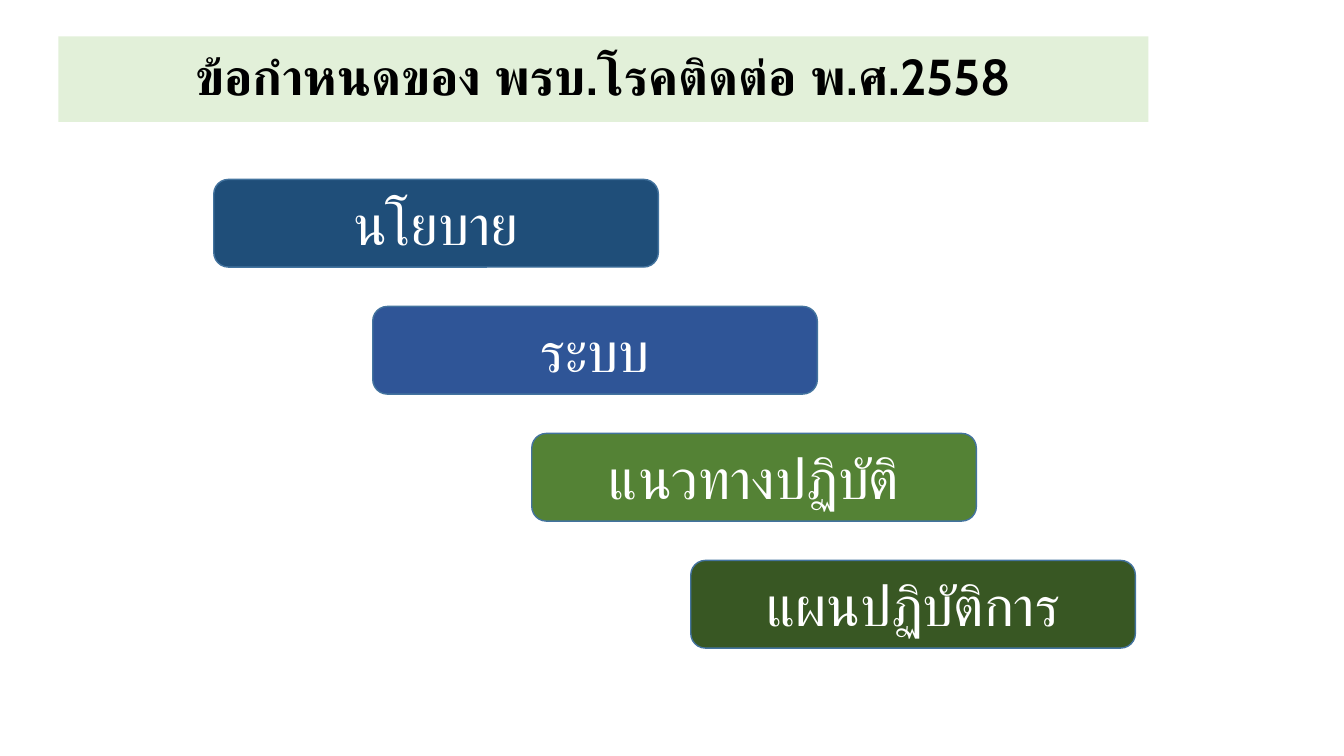
from pptx import Presentation
from pptx.dml.color import RGBColor
from pptx.enum import shapes, text
from pptx.util import Inches, Pt

STEPS = [
    ("นโยบาย", "1F4E79"),
    ("ระบบ", "2F5597"),
    ("แนวทางปฏิบัติ", "548235"),
    ("แผนปฏิบัติการ", "385723"),
]


def paint(target, color):
    """Give a fill a solid colour from a hex string."""
    target.solid()
    target.fore_color.rgb = RGBColor.from_string(color)


def add_box(slide, kind, place, fill, label, size, color, bold=False):
    """Add a filled shape with one centred line of text."""
    box = slide.shapes.add_shape(kind, *(Inches(n) for n in place))
    box.shadow.inherit = False
    paint(box.fill, fill)
    box.line.fill.background()
    frame = box.text_frame
    frame.word_wrap = True
    frame.vertical_anchor = text.MSO_ANCHOR.MIDDLE
    line = frame.paragraphs[0]
    line.text = label
    line.alignment = text.PP_ALIGN.CENTER
    font = line.font
    font.name, font.size, font.bold = "Cabin", Pt(size), bold
    paint(font.fill, color)
    return box


def add_title(slide, label):
    """Add the pale title band."""
    band = add_box(slide, shapes.MSO_SHAPE.RECTANGLE, (0.58, 0.36, 10.81, 0.85),
                   "E2F0D9", label, 36, "000000", True)
    band.text_frame.paragraphs[0].line_spacing = 0.9


def add_step(slide, index, label, fill):
    """Add one rounded step of the staircase."""
    place = (2.12 + 1.577 * index, 1.78 + 1.26 * index, 4.41, 0.87)
    step = add_box(slide, shapes.MSO_SHAPE.ROUNDED_RECTANGLE, place,
                   fill, label, 40, "FFFFFF")
    paint(step.line.fill, "43739E")
    step.line.width = Pt(1)


def main():
    """Build and save the slide."""
    deck = Presentation()
    deck.slide_width, deck.slide_height = Inches(13.33), Inches(7.5)
    slide = deck.slides.add_slide(deck.slide_layouts[6])
    add_title(slide, "ข้อกำหนดของ พรบ.โรคติดต่อ พ.ศ.2558")
    for index, (label, fill) in enumerate(STEPS):
        add_step(slide, index, label, fill)
    deck.save("out.pptx")


if __name__ == "__main__":
    main()
